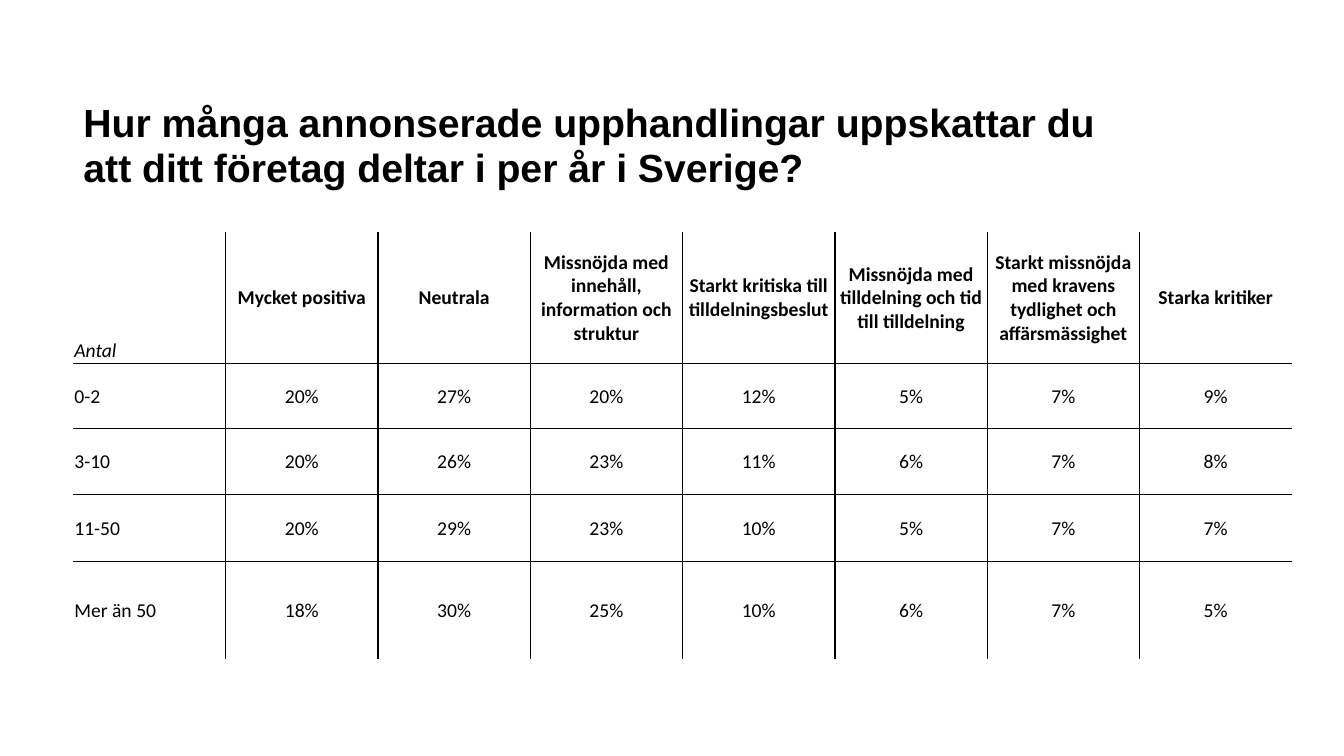
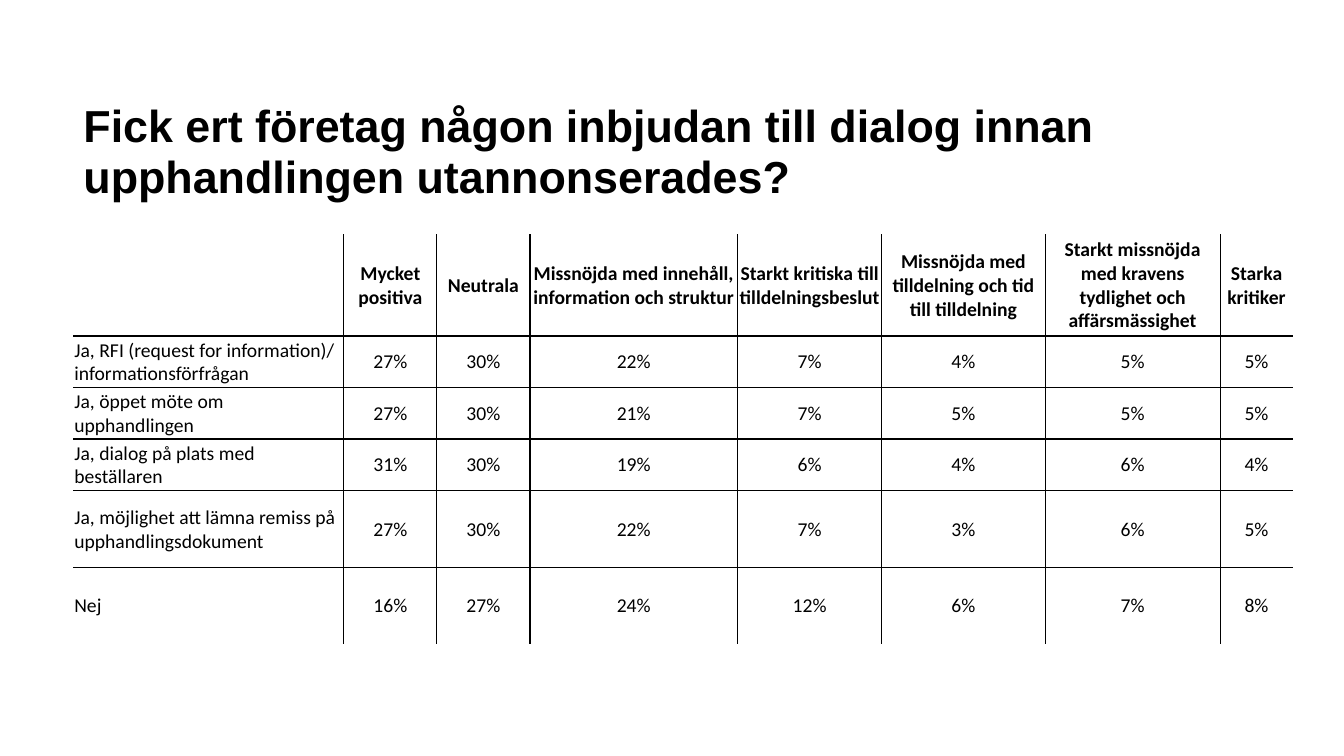
from dataclasses import dataclass

from lxml import etree
from pptx import Presentation
from pptx.dml.color import RGBColor
from pptx.enum.text import MSO_ANCHOR as Anchor, MSO_AUTO_SIZE as AutoSize, PP_ALIGN as Align
from pptx.oxml.ns import qn
from pptx.util import Pt

# Content
GROUPS = [
    "Mycket positiva",
    "Neutrala",
    "Missnöjda med innehåll, information och struktur",
    "Starkt kritiska till tilldelningsbeslut",
    "Missnöjda med tilldelning och tid till tilldelning",
    "Starkt missnöjda med kravens tydlighet och affärsmässighet",
    "Starka kritiker",
]
QUESTIONS = [
    {
        "title": "Hur många annonserade upphandlingar uppskattar du "
                 "att ditt företag deltar i per år i Sverige?",
        "title_size": 28,
        "corner": "Antal",
        "answers": [
            ("0-2", [20, 27, 20, 12, 5, 7, 9]),
            ("3-10", [20, 26, 23, 11, 6, 7, 8]),
            ("11-50", [20, 29, 23, 10, 5, 7, 7]),
            ("Mer än 50", [18, 30, 25, 10, 6, 7, 5]),
        ],
        "top": 165.8,
        "widths": [108.8] * 8,
        "heights": [93.6, 46.8, 47.2, 47.5, 70.2],
    },
    {
        "title": "Fick ert företag någon inbjudan till dialog innan "
                 "upphandlingen utannonserades?",
        "title_size": 32,
        "corner": "",
        "answers": [
            ("Ja, RFI (request for information)/ informationsförfrågan", [27, 30, 22, 7, 4, 5, 5]),
            ("Ja, öppet möte om upphandlingen", [27, 30, 21, 7, 5, 5, 5]),
            ("Ja, dialog på plats med beställaren", [31, 30, 19, 6, 4, 6, 4]),
            ("Ja, möjlighet att lämna remiss på upphandlingsdokument", [27, 30, 22, 7, 3, 6, 5]),
            ("Nej", [16, 27, 24, 12, 6, 7, 8]),
        ],
        "top": 167.2,
        "widths": [193.2, 66.5, 66.5, 148.3, 103.1, 116.6, 125.1, 51.9],
        "heights": [72.8, 36.8, 36.8, 36.8, 54.8, 54.8],
    },
]


@dataclass(frozen=True)
class Theme:
    ink: str = "000000"
    paper: str = "FFFFFF"
    title_font: str = "Arial"
    table_font: str = "Calibri"
    table_size: float = 14
    rule: float = 1
    left: float = 52.4
    inset: float = 0.7


THEME = Theme()


def add_text(paragraph, text, font, size, bold=False, italic=False):
    run = paragraph.add_run()
    run.text = text
    run.font.name, run.font.size = font, Pt(size)
    run.font.bold, run.font.italic = bold, italic
    run.font.color.rgb = RGBColor.from_string(THEME.ink)


def add_title(slide, text, size):
    title = slide.shapes.title
    title.left, title.top, title.width, title.height = Pt(THEME.left), Pt(69), Pt(757), Pt(97)
    frame = title.text_frame
    frame.word_wrap, frame.auto_size = True, AutoSize.NONE
    frame.vertical_anchor = Anchor.TOP
    paragraph = frame.paragraphs[0]
    paragraph.alignment, paragraph.line_spacing = Align.LEFT, 0.95
    add_text(paragraph, text, THEME.title_font, size, bold=True)


def set_borders(cell, ruled):
    """Rule the given sides (of L, R, T, B) and leave the others bare."""
    properties = cell._tc.get_or_add_tcPr()
    for side in "LRTB":
        line = etree.SubElement(properties, qn(f"a:ln{side}"), w=str(Pt(THEME.rule)))
        if side in ruled:
            fill = etree.SubElement(line, qn("a:solidFill"))
            etree.SubElement(fill, qn("a:srgbClr"), val=THEME.ink)
        else:
            etree.SubElement(line, qn("a:noFill"))


def add_answers(slide, question):
    rows = [[question["corner"], *GROUPS]]
    rows += [[answer, *(f"{share}%" for share in shares)]
             for answer, shares in question["answers"]]
    widths, heights = question["widths"], question["heights"]
    table = slide.shapes.add_table(
        len(rows), len(widths), Pt(THEME.left), Pt(question["top"]),
        Pt(sum(widths)), Pt(sum(heights))).table
    table.first_row = table.horz_banding = False
    for column, width in zip(table.columns, widths):
        column.width = Pt(width)
    for row, height in zip(table.rows, heights):
        row.height = Pt(height)

    last_row, last_column = len(rows) - 1, len(widths) - 1
    for r, texts in enumerate(rows):
        for c, text in enumerate(texts):
            cell = table.cell(r, c)
            corner = r == c == 0
            # Only the inner grid lines are drawn
            inner = {"L": c > 0, "R": c < last_column, "T": r > 0, "B": r < last_row}
            set_borders(cell, [side for side, shown in inner.items() if shown])
            cell.fill.background()
            cell.margin_left = cell.margin_right = cell.margin_top = Pt(THEME.inset)
            cell.margin_bottom = Pt(0)
            cell.vertical_anchor = Anchor.BOTTOM if corner else Anchor.MIDDLE
            paragraph = cell.text_frame.paragraphs[0]
            paragraph.alignment = Align.CENTER if c else Align.LEFT
            if text:
                add_text(paragraph, text, THEME.table_font, THEME.table_size,
                         bold=r == 0 and not corner, italic=corner)


def main():
    deck = Presentation()
    deck.slide_width, deck.slide_height = Pt(960), Pt(540)
    background = deck.slide_master.background.fill
    background.solid()
    background.fore_color.rgb = RGBColor.from_string(THEME.paper)
    title_only = deck.slide_layouts[5]
    for question in QUESTIONS:
        slide = deck.slides.add_slide(title_only)
        add_title(slide, question["title"], question["title_size"])
        add_answers(slide, question)
    deck.save("out.pptx")


if __name__ == "__main__":
    main()
